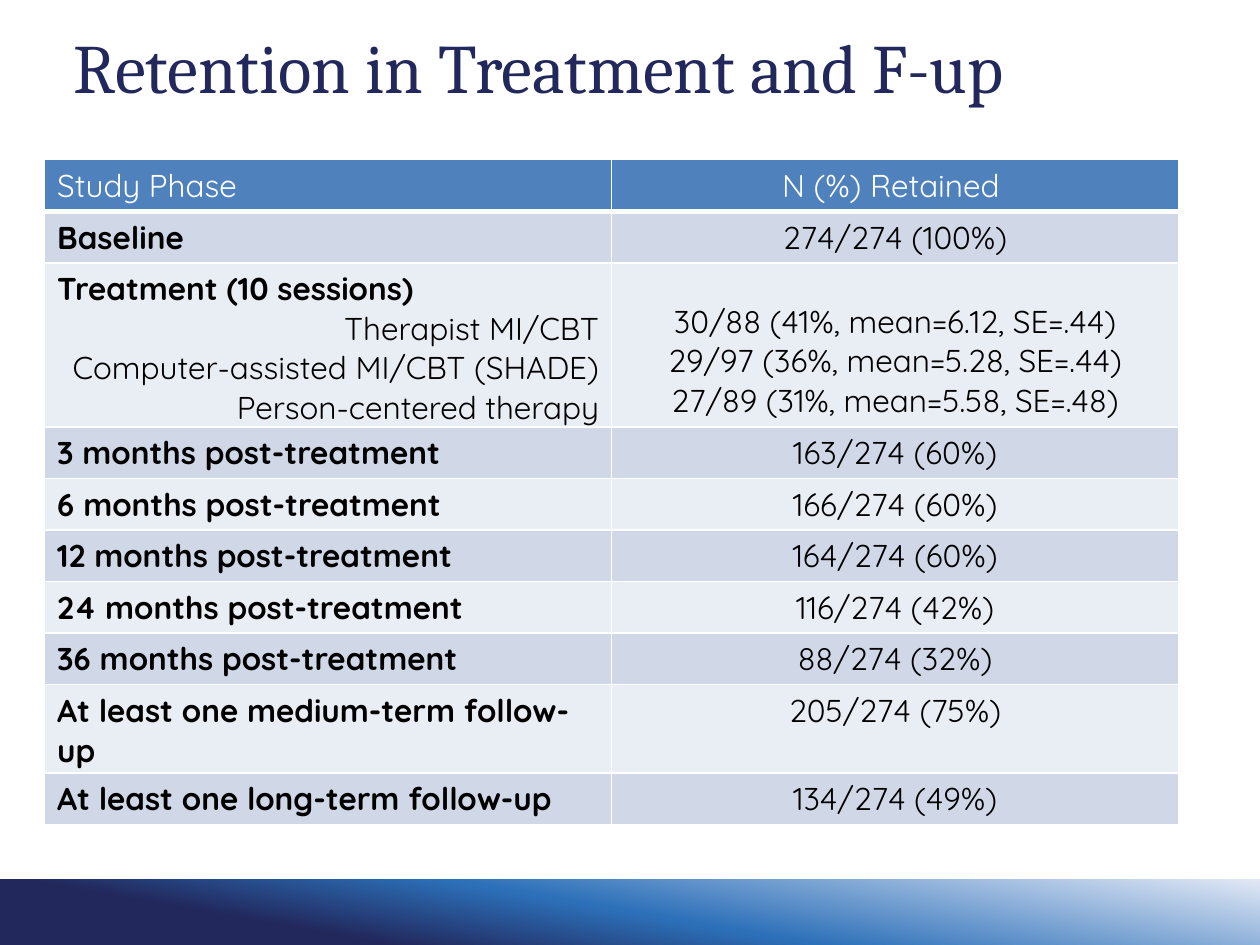
from copy import deepcopy

from pptx import Presentation
from pptx.dml.color import RGBColor
from pptx.enum.shapes import MSO_SHAPE
from pptx.enum.text import MSO_ANCHOR, PP_ALIGN
from pptx.oxml import parse_xml
from pptx.oxml.ns import nsdecls
from pptx.util import Cm, Pt

RECTANGLE = MSO_SHAPE.RECTANGLE
TOP, MIDDLE, BOTTOM = MSO_ANCHOR.TOP, MSO_ANCHOR.MIDDLE, MSO_ANCHOR.BOTTOM
LEFT, CENTER, RIGHT = PP_ALIGN.LEFT, PP_ALIGN.CENTER, PP_ALIGN.RIGHT

NAVY, WHITE, BLACK = "22285C", "FFFFFF", "000000"
HEADER_FILL = "4F81BD"
BAND_FILLS = ["D0D8E8", "E9EDF4"]
FOOTER_STOPS = [(0.24, NAVY), (0.5, "2C70B8"), (1, "E1E8F5")]

TITLE_FORMAT = {"name": "Cambria", "size": Pt(39.6), "bold": False}
BODY_FORMAT = {"name": "Quicksand", "size": Pt(18), "bold": False}
PHASE_FORMAT = {**BODY_FORMAT, "bold": True}

HEADER = ["Study Phase", "N (%) Retained "]
RETENTION = [
    (["Baseline"], ["274/274 (100%)"]),
    (
        [
            "Treatment (10 sessions)",
            "Therapist MI/CBT",
            "Computer-assisted MI/CBT (SHADE)",
            "Person-centered therapy",
        ],
        [
            "30/88 (41%, mean=6.12, SE=.44)",
            "29/97 (36%, mean=5.28, SE=.44)",
            "27/89 (31%, mean=5.58, SE=.48)",
        ],
    ),
    (["3 months post-treatment"], ["163/274 (60%)"]),
    (["6 months post-treatment"], ["166/274 (60%)"]),
    (["12 months post-treatment"], ["164/274 (60%)"]),
    (["24 months post-treatment"], ["116/274 (42%)"]),
    (["36 months post-treatment"], ["88/274 (32%)"]),
    (["At least one medium-term follow-up"], ["205/274 (75%)"]),
    (["At least one long-term follow-up"], ["134/274 (49%)"]),
]


def rgb(color):
    return RGBColor.from_string(color)


def write_paragraph(paragraph, text, font_format, color, alignment=LEFT):
    paragraph.alignment = alignment
    run = paragraph.add_run()
    run.text = text
    for name, value in font_format.items():
        setattr(run.font, name, value)
    run.font.color.rgb = rgb(color)


def add_footer_band(slide):
    band = slide.shapes.add_shape(RECTANGLE, 0, Cm(17.73), Cm(25.4), Cm(1.32))
    band.shadow.inherit = False
    band.line.fill.background()
    band.fill.gradient()
    band.fill.gradient_angle = 80
    stop_list = band.fill._fill._gradFill.gsLst
    stop_list.append(deepcopy(stop_list[-1]))
    for stop, (position, color) in zip(band.fill.gradient_stops, FOOTER_STOPS):
        stop.position = position
        stop.color.rgb = rgb(color)


def add_title(slide, text):
    box = slide.shapes.add_textbox(Cm(1.24), Cm(0.33), Cm(22.86), Cm(2))
    frame = box.text_frame
    frame.word_wrap = True
    frame.vertical_anchor = MIDDLE
    write_paragraph(frame.paragraphs[0], text, TITLE_FORMAT, NAVY)


def set_borders(cell, bottom_width):
    widths = {"lnL": 1, "lnR": 1, "lnT": 1, "lnB": bottom_width}
    properties = cell._tc.get_or_add_tcPr()
    for tag, width in widths.items():
        properties.append(parse_xml(
            f'<a:{tag} {nsdecls("a")} w="{Pt(width)}"><a:solidFill>'
            f'<a:srgbClr val="{WHITE}"/></a:solidFill></a:{tag}>'
        ))


def style_cell(cell, color, bottom_width=1, anchor=TOP):
    set_borders(cell, bottom_width)
    cell.fill.solid()
    cell.fill.fore_color.rgb = rgb(color)
    cell.vertical_anchor = anchor


def write_lines(cell, lines, first_style, other_style):
    """Write one paragraph per line; a style is a font format and an alignment."""
    frame = cell.text_frame
    for index, line in enumerate(lines):
        paragraph = frame.add_paragraph() if index else frame.paragraphs[0]
        font_format, alignment = other_style if index else first_style
        write_paragraph(paragraph, line, font_format, BLACK, alignment)


def add_retention_table(slide):
    row_count = len(RETENTION) + 1
    row_height = Cm(1.04)
    table = slide.shapes.add_table(
        row_count, 2, Cm(0.9), Cm(3.22), Cm(22.86), row_height * row_count
    ).table
    for row in table.rows:
        row.height = row_height

    for column, (text, alignment) in enumerate(zip(HEADER, [LEFT, CENTER])):
        cell = table.cell(0, column)
        style_cell(cell, HEADER_FILL, bottom_width=3)
        paragraph = cell.text_frame.paragraphs[0]
        write_paragraph(paragraph, text, BODY_FORMAT, WHITE, alignment)

    phase_style, arm_style = (PHASE_FORMAT, LEFT), (BODY_FORMAT, RIGHT)
    count_style = (BODY_FORMAT, CENTER)
    for row, (phases, counts) in enumerate(RETENTION, start=1):
        color = BAND_FILLS[(row - 1) % 2]
        phase_cell, count_cell = table.cell(row, 0), table.cell(row, 1)
        style_cell(phase_cell, color)
        write_lines(phase_cell, phases, phase_style, arm_style)
        # Counts for the treatment arms line up with the arms below the heading
        style_cell(count_cell, color, anchor=BOTTOM if len(counts) > 1 else TOP)
        write_lines(count_cell, counts, count_style, count_style)


def main():
    presentation = Presentation()
    presentation.slide_width, presentation.slide_height = Cm(25.4), Cm(19.05)
    slide = presentation.slides.add_slide(presentation.slide_layouts[6])
    add_footer_band(slide)
    add_title(slide, "Retention in Treatment and F-up")
    add_retention_table(slide)
    presentation.save("out.pptx")


if __name__ == "__main__":
    main()
